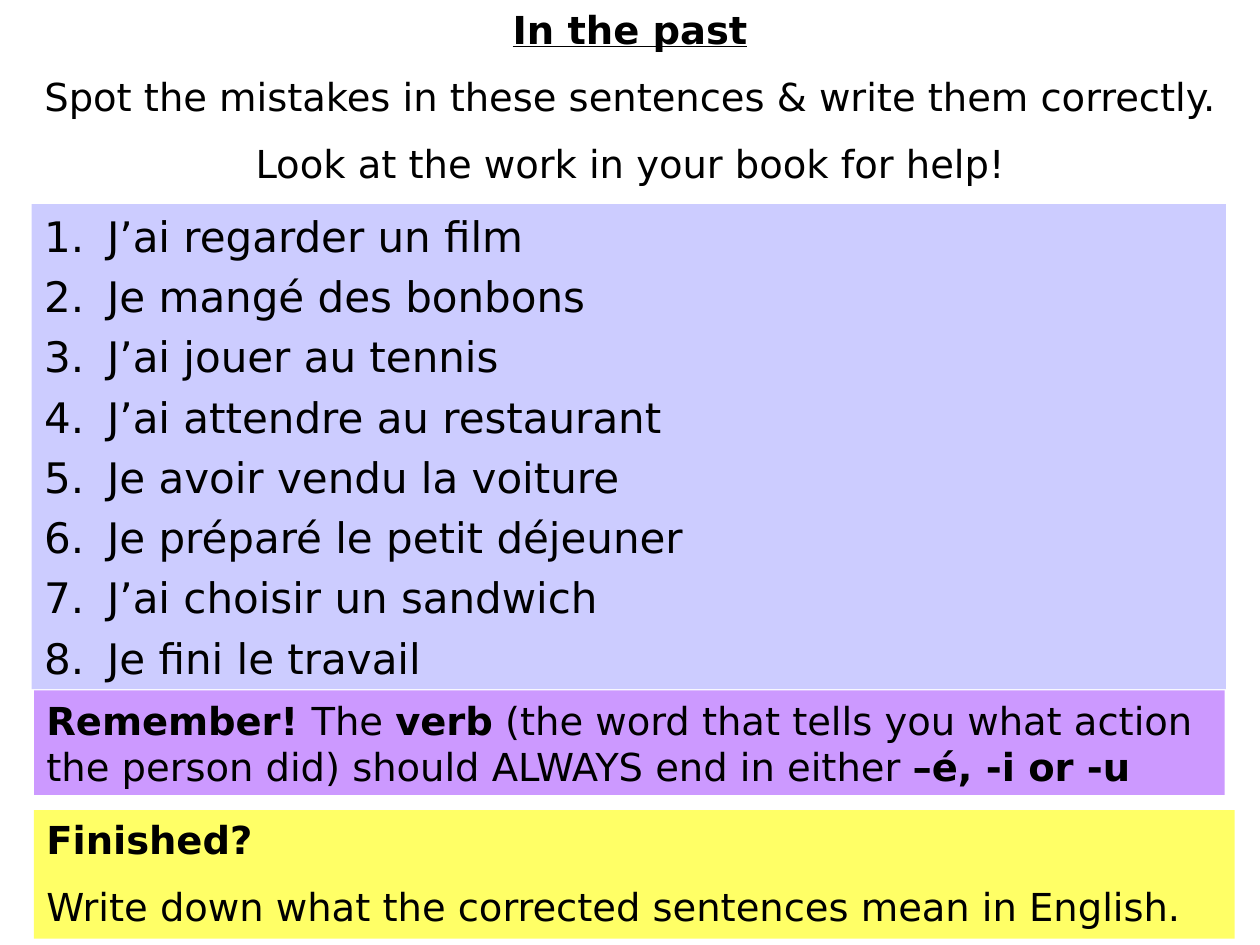
from lxml.etree import SubElement
from pptx import Presentation
from pptx.dml.color import RGBColor as RGB
from pptx.enum.shapes import MSO_SHAPE as SHAPE
from pptx.enum.text import MSO_ANCHOR as ANCHOR, MSO_AUTO_SIZE as FIT, PP_ALIGN as ALIGN
from pptx.oxml.ns import qn
from pptx.util import Inches, Pt

W, H = 10, 7.5
FONT = "DejaVu Sans"
COLORS = {"text": "000000", "list": "CCCCFF", "tip": "CC99FF", "extra": "FFFF66"}

HEADING = [
    [("In the past", "bu")],
    [("Spot the mistakes in these sentences & write them correctly.", "")],
    [("Look at the work in your book for help!", "")],
]
SENTENCES = [
    "J’ai regarder un film",
    "Je mangé des bonbons",
    "J’ai jouer au tennis",
    "J’ai attendre au restaurant",
    "Je avoir vendu la voiture",
    "Je préparé le petit déjeuner",
    "J’ai choisir un sandwich",
    "Je fini le travail",
]
TIP = [[
    ("Remember! ", "b"),
    ("The ", ""),
    ("verb", "b"),
    (" (the word that tells you what action the person did) should ALWAYS end in either ", ""),
    ("–é, -i or -u", "b"),
]]
EXTRA = [
    [("Finished?", "b")],
    [("Write down what the corrected sentences mean in English.", "")],
]


def place(sp, left, top, width, height):
    sp.left, sp.top = Inches(left * W), Inches(top * H)
    sp.width, sp.height = Inches(width * W), Inches(height * H)


def paint(sp, color):
    sp.fill.solid()
    sp.fill.fore_color.rgb = RGB.from_string(COLORS[color])
    sp.line.fill.background()


def write(sp, paragraphs, size, gap, align=ALIGN.LEFT):
    tf = sp.text_frame
    tf.word_wrap = True
    tf.auto_size = FIT.NONE
    tf.vertical_anchor = ANCHOR.TOP
    for i, runs in enumerate(paragraphs):
        p = tf.add_paragraph() if i else tf.paragraphs[0]
        p.alignment = align
        p.space_before = Pt(gap if i else 0)
        for text, style in runs:
            r = p.add_run()
            r.text = text
            r.font.name = FONT
            r.font.size = Pt(size)
            r.font.bold = "b" in style
            r.font.underline = "u" in style
            r.font.color.rgb = RGB.from_string(COLORS["text"])


def number(sp, indent):
    for p in sp.text_frame.paragraphs:
        pPr = p._p.get_or_add_pPr()
        pPr.set("marL", str(Inches(indent)))
        pPr.set("indent", str(-Inches(indent)))
        SubElement(pPr, qn("a:buFont"), typeface=FONT)
        SubElement(pPr, qn("a:buAutoNum"), type="arabicPeriod")


def add_note(slide, box, color, paragraphs):
    sp = slide.shapes.add_shape(SHAPE.RECTANGLE, 0, 0, 0, 0)
    sp.shadow.inherit = False
    place(sp, *box)
    paint(sp, color)
    write(sp, paragraphs, 22, 11.8)


def main():
    prs = Presentation()
    prs.slide_width, prs.slide_height = Inches(W), Inches(H)
    slide = prs.slides.add_slide(prs.slide_layouts[1])
    title, body = slide.placeholders

    place(title, 0, 0, 1, 1.57 / H)
    write(title, HEADING, 22, 11.8, ALIGN.CENTER)

    place(body, 0.25 / W, 1.62 / H, 9.48 / W, 3.85 / H)
    paint(body, "list")
    write(body, [[(s, "")] for s in SENTENCES], 24, 5.6)
    number(body, 0.5)

    add_note(slide, (0.27 / W, 6.43 / H, 9.53 / W, 1.02 / H), "extra", EXTRA)
    add_note(slide, (0.27 / W, 5.48 / H, 9.45 / W, 0.83 / H), "tip", TIP)
    prs.save("out.pptx")


if __name__ == "__main__":
    main()
